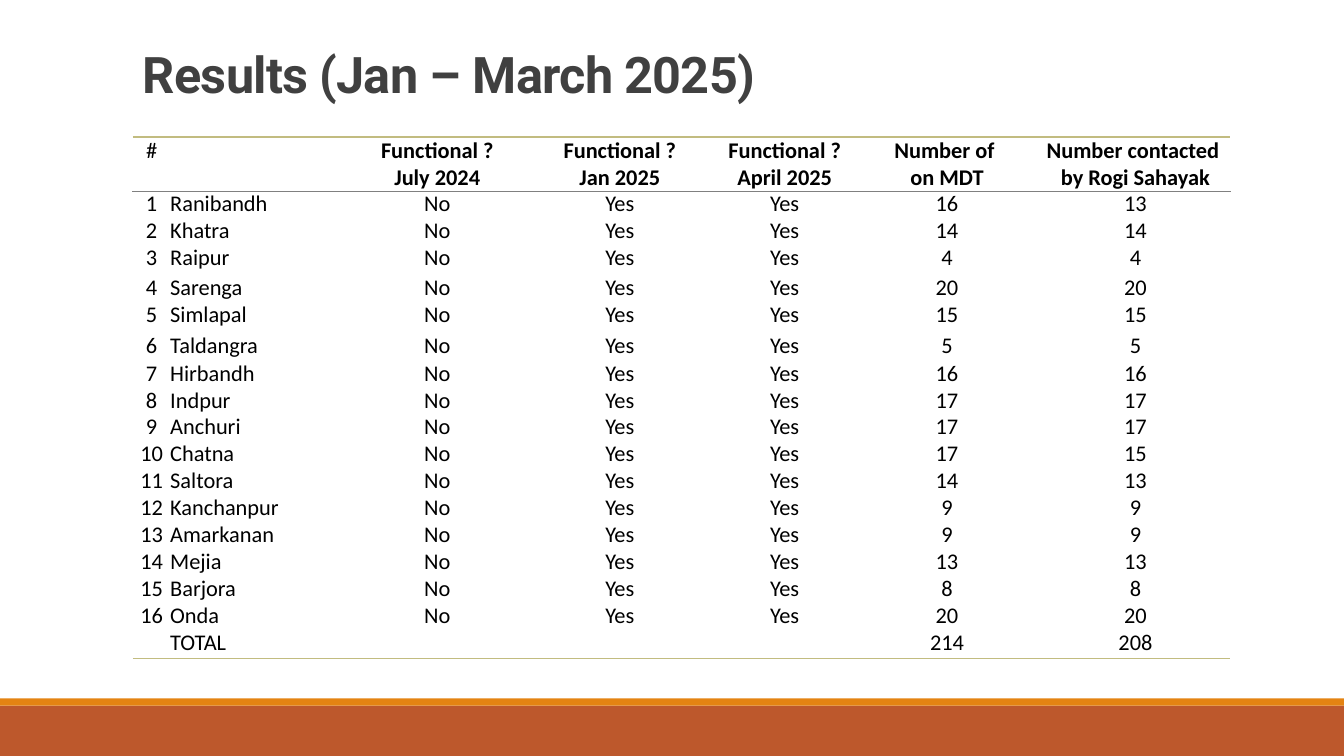
import pptx
import pptx.dml.color
import pptx.enum.shapes
import pptx.enum.text
import pptx.oxml
import pptx.oxml.ns
import pptx.util

Cm = pptx.util.Cm
ALIGN = pptx.enum.text.PP_ALIGN
ANCHOR = pptx.enum.text.MSO_ANCHOR


def color(hex_string):
    return pptx.dml.color.RGBColor.from_string(hex_string)


def write(text_frame, text, font="Calibri", size=16, fill="000000", bold=False,
          align=ALIGN.CENTER, line_spacing=1.0, tracking=0):
    """Fill a text frame, one paragraph per line; tracking is in 1/100 point."""
    for index, line in enumerate(text.split("\n")):
        paragraph = text_frame.paragraphs[0] if index == 0 else text_frame.add_paragraph()
        paragraph.alignment = align
        paragraph.line_spacing = line_spacing
        # The paragraph font also sets the height of an empty cell.
        fonts = [paragraph.font]
        if line:
            run = paragraph.add_run()
            run.text = line
            fonts.append(run.font)
            if tracking:
                run._r.get_or_add_rPr().set("spc", str(tracking))
        for item in fonts:
            item.name = font
            item.size = pptx.util.Pt(size)
            item.bold = bold
            item.color.rgb = color(fill)


presentation = pptx.Presentation()
presentation.slide_width = Cm(33.87)
presentation.slide_height = Cm(19.05)
slide = presentation.slides.add_slide(presentation.slide_layouts[6])

# Footer bands
for top, height, fill in [(17.78, 1.27, "BD582C"), (17.6, 0.18, "E48312")]:
    band = slide.shapes.add_shape(pptx.enum.shapes.MSO_SHAPE.RECTANGLE,
                                  0, Cm(top), presentation.slide_width, Cm(height))
    band.shadow.inherit = False
    band.fill.solid()
    band.fill.fore_color.rgb = color(fill)
    band.line.fill.background()

# Rule under the table header
rule = slide.shapes.add_connector(pptx.enum.shapes.MSO_CONNECTOR.STRAIGHT,
                                  Cm(3.33), Cm(4.83), Cm(31.01), Cm(4.83))
rule.line.color.rgb = color("808080")
rule.line.width = pptx.util.Pt(0.5)
rule._element.spPr.append(pptx.oxml.parse_xml(
    f"<a:effectLst {pptx.oxml.ns.nsdecls('a')}/>"))

# Title
title = slide.shapes.add_textbox(Cm(3.35), Cm(0.25), Cm(29.21), Cm(2.49))
title.text_frame.word_wrap = True
title.text_frame.vertical_anchor = ANCHOR.BOTTOM
write(title.text_frame, "Results (Jan – March 2025)", font="Roboto", size=36,
      fill="404040", bold=True, align=ALIGN.LEFT, line_spacing=0.85, tracking=-50)

# Table content: block, number on MDT, number contacted
blocks = [
    ("Ranibandh", 16, 13), ("Khatra", 14, 14), ("Raipur", 4, 4), ("Sarenga", 20, 20),
    ("Simlapal", 15, 15), ("Taldangra", 5, 5), ("Hirbandh", 16, 16), ("Indpur", 17, 17),
    ("Anchuri", 17, 17), ("Chatna", 17, 15), ("Saltora", 14, 13), ("Kanchanpur", 9, 9),
    ("Amarkanan", 9, 9), ("Mejia", 13, 13), ("Barjora", 8, 8), ("Onda", 20, 20),
]
header = ["#", "", "Functional ?\nJuly 2024", "Functional ?\nJan 2025",
          "Functional ?\nApril 2025", "Number of \non MDT",
          "Number contacted \nby Rogi Sahayak"]
rows = [header]
for number, (block, on_mdt, contacted) in enumerate(blocks, start=1):
    rows.append([str(number), block, "No", "Yes", "Yes", str(on_mdt), str(contacted)])
totals = [str(sum(block[column] for block in blocks)) for column in (1, 2)]
rows.append(["", "TOTAL", "", "", "", *totals])

last = len(rows) - 1
column_widths = [0.94, 4.57, 4.32, 4.88, 3.43, 4.75, 4.75]
special_heights = {0: 1.35, 4: 0.76, 6: 0.79, last: 0.74}
row_heights = [special_heights.get(index, 0.66) for index in range(len(rows))]
edges = {0: "lnT", last: "lnB"}

frame = slide.shapes.add_table(len(rows), len(header), Cm(3.35), Cm(3.45),
                               Cm(sum(column_widths)), Cm(sum(row_heights)))
table = frame.table
table.first_row = False
table.horz_banding = False
style = table._tbl.tblPr.find(pptx.oxml.ns.qn("a:tableStyleId"))
style.text = "{2D5ABB26-0587-4C30-8999-92F81FD0307C}"  # No Style, No Grid

for column, width in zip(table.columns, column_widths):
    column.width = Cm(width)
for row_index, (values, height) in enumerate(zip(rows, row_heights)):
    table.rows[row_index].height = Cm(height)
    for column_index, value in enumerate(values):
        cell = table.cell(row_index, column_index)
        cell.margin_left = cell.margin_right = cell.margin_top = cell.margin_bottom = 0
        cell.vertical_anchor = ANCHOR.TOP if row_index in edges else ANCHOR.BOTTOM
        cell.fill.background()
        write(cell.text_frame, value, bold=row_index == 0 and column_index > 0,
              align=ALIGN.LEFT if column_index == 1 else ALIGN.CENTER)
        if row_index in edges:
            edge = edges[row_index]
            cell._tc.get_or_add_tcPr().insert(0, pptx.oxml.parse_xml(
                f'<a:{edge} {pptx.oxml.ns.nsdecls("a")} w="12700"><a:solidFill>'
                f'<a:srgbClr val="C2BC80"/></a:solidFill></a:{edge}>'))

presentation.save("out.pptx")
